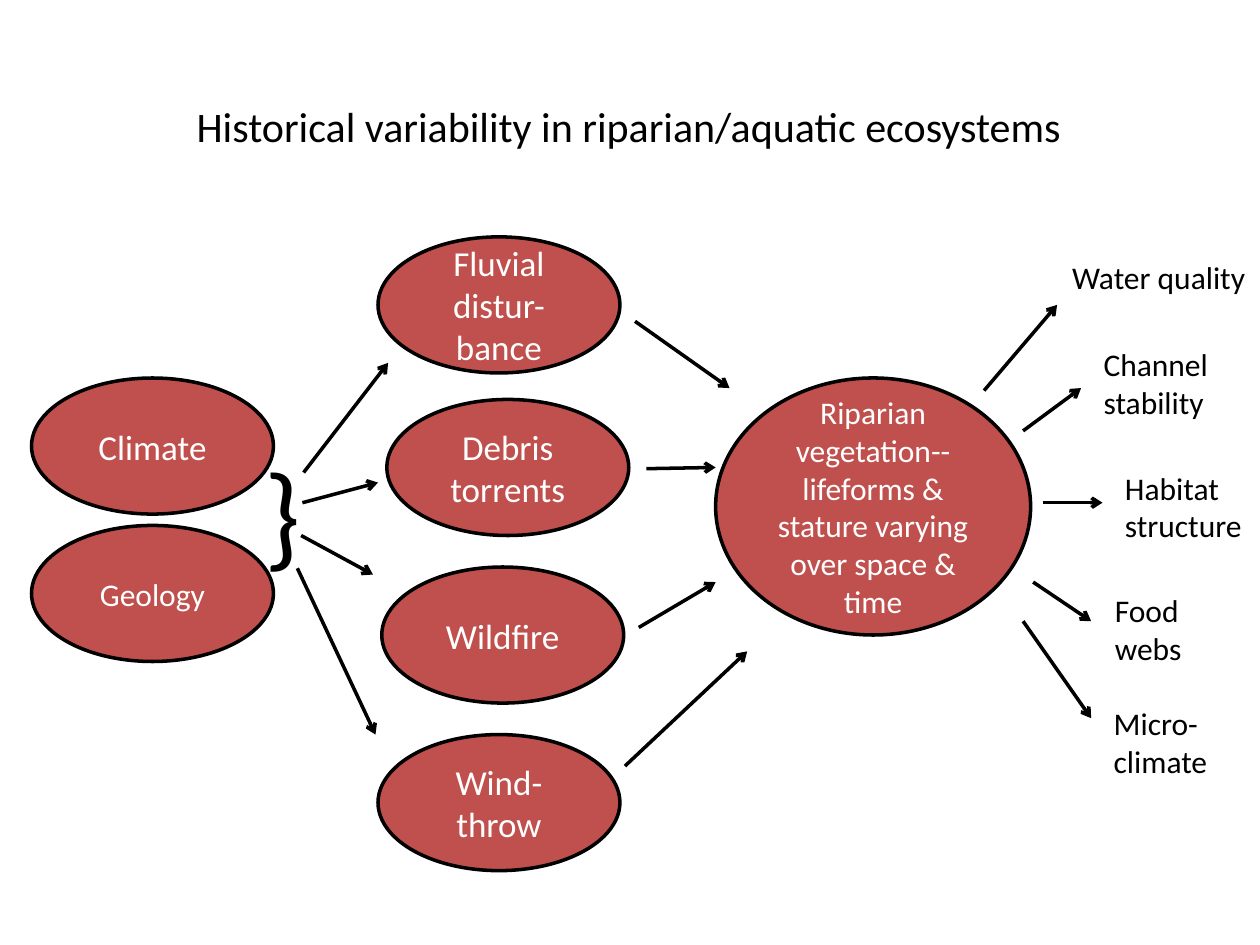
from dataclasses import dataclass

from lxml import etree
from pptx import Presentation
from pptx import util as u
from pptx.dml.color import RGBColor
from pptx.enum import shapes, text
from pptx.oxml import ns


@dataclass(frozen=True)
class Theme:
    font: str = "Calibri"
    ink: RGBColor = RGBColor(0x00, 0x00, 0x00)
    paper: RGBColor = RGBColor(0xFF, 0xFF, 0xFF)
    node: RGBColor = RGBColor(0xC0, 0x50, 0x4D)
    title_size: int = 24
    node_size: int = 20
    small_size: int = 18
    brace_size: int = 66
    line_width: int = 2


class Diagram:
    """Draws diagram elements in one theme on the current slide."""

    def __init__(self, slide, theme):
        self.slide = slide
        self.theme = theme

    def set_wording(self, shape, wording, size, color, align, anchor, wrap=True):
        frame = shape.text_frame
        frame.text = wording
        frame.word_wrap = wrap
        frame.auto_size = text.MSO_AUTO_SIZE.NONE
        frame.vertical_anchor = anchor
        for para in frame.paragraphs:
            para.alignment = align
            for span in para.runs:
                span.font.name = self.theme.font
                span.font.size = u.Pt(size)
                span.font.color.rgb = color

    def title(self, wording, left, top, width, height):
        box = self.slide.shapes.title
        box.left, box.top = u.Inches(left), u.Inches(top)
        box.width, box.height = u.Inches(width), u.Inches(height)
        self.set_wording(box, wording, self.theme.title_size, self.theme.ink,
                         text.PP_ALIGN.LEFT, text.MSO_ANCHOR.TOP, wrap=False)

    def label(self, wording, left, top, width, height, size=None, wrap=True):
        box = self.slide.shapes.add_textbox(
            u.Inches(left), u.Inches(top), u.Inches(width), u.Inches(height))
        self.set_wording(box, wording, size or self.theme.small_size, self.theme.ink,
                         text.PP_ALIGN.LEFT, text.MSO_ANCHOR.TOP, wrap)

    def node(self, wording, left, top, width=1.92, height=1.08, size=None):
        oval = self.slide.shapes.add_shape(
            shapes.MSO_SHAPE.OVAL, u.Inches(left), u.Inches(top),
            u.Inches(width), u.Inches(height))
        oval.shadow.inherit = False
        oval.fill.solid()
        oval.fill.fore_color.rgb = self.theme.node
        oval.line.color.rgb = self.theme.ink
        oval.line.width = u.Pt(self.theme.line_width)
        self.set_wording(oval, wording, size or self.theme.node_size, self.theme.paper,
                         text.PP_ALIGN.CENTER, text.MSO_ANCHOR.MIDDLE)

    def arrow(self, start, end):
        connector = self.slide.shapes.add_connector(
            shapes.MSO_CONNECTOR.STRAIGHT,
            *(u.Inches(length) for length in (*start, *end)))
        connector.line.color.rgb = self.theme.ink
        connector.line.width = u.Pt(self.theme.line_width)
        properties = connector.element.spPr
        outline = properties.find(ns.qn("a:ln"))
        etree.SubElement(outline, ns.qn("a:tailEnd"), type="arrow")
        etree.SubElement(properties, ns.qn("a:effectLst"))


def main():
    deck = Presentation()
    deck.slide_width, deck.slide_height = u.Inches(10), u.Inches(7.5)
    theme = Theme()
    page = deck.slides.add_slide(deck.slide_layouts.get_by_name("Title Only"))
    diagram = Diagram(page, theme)

    diagram.title("Historical variability in riparian/aquatic ecosystems",
                  1.46, 0.75, 7.13, 0.5)

    # Drivers
    diagram.node("Climate", 0.25, 3)
    diagram.node("Geology", 0.25, 4.17, size=theme.small_size)
    diagram.label("}", 2, 3.45, 0.36, 1.21, size=theme.brace_size)

    # Each disturbance: node position, arrow from drivers, arrow to vegetation
    disturbances = [
        ("Fluvial distur-bance", (3, 1.88),
         ((2.41, 3.75), (3.08, 2.88)), ((5.04, 2.55), (5.79, 3.08))),
        ("Debris torrents", (3.07, 3.17),
         ((2.4, 3.99), (3, 3.83)), ((5.13, 3.72), (5.68, 3.71))),
        ("Wildfire", (3.03, 4.5),
         ((2.39, 4.25), (2.96, 4.56)), ((5.07, 4.98), (5.68, 4.62))),
        ("Wind-throw", (3, 5.83),
         ((2.36, 4.51), (2.98, 5.83)), ((4.96, 6.08), (5.93, 5.17))),
    ]
    for wording, place, from_drivers, to_vegetation in disturbances:
        diagram.node(wording, *place)
        diagram.arrow(*from_drivers)
        diagram.arrow(*to_vegetation)

    diagram.node("Riparian vegetation-- lifeforms & stature varying over space & time",
                 5.68, 3, 2.5, 2.04, size=theme.small_size)

    # Each outcome: label box, arrow from vegetation, wrapping
    outcomes = [
        ("Water quality", (8.41, 2, 1.59, 0.4), ((7.81, 3.1), (8.39, 2.42)), False),
        ("Channel stability", (8.66, 2.69, 1.58, 0.71), ((8.12, 3.42), (8.58, 3.08)), True),
        ("Habitat structure", (8.83, 3.67, 1.17, 0.71), ((8.28, 3.99), (8.75, 3.99)), True),
        ("Food webs", (8.75, 4.64, 0.83, 0.71), ((8.2, 4.62), (8.66, 4.93)), True),
        ("Micro-climate", (8.74, 5.54, 1.01, 0.71), ((8.12, 4.93), (8.66, 5.7)), True),
    ]
    for wording, bounds, from_vegetation, wrap in outcomes:
        diagram.arrow(*from_vegetation)
        diagram.label(wording, *bounds, wrap=wrap)

    deck.save("out.pptx")


if __name__ == "__main__":
    main()
